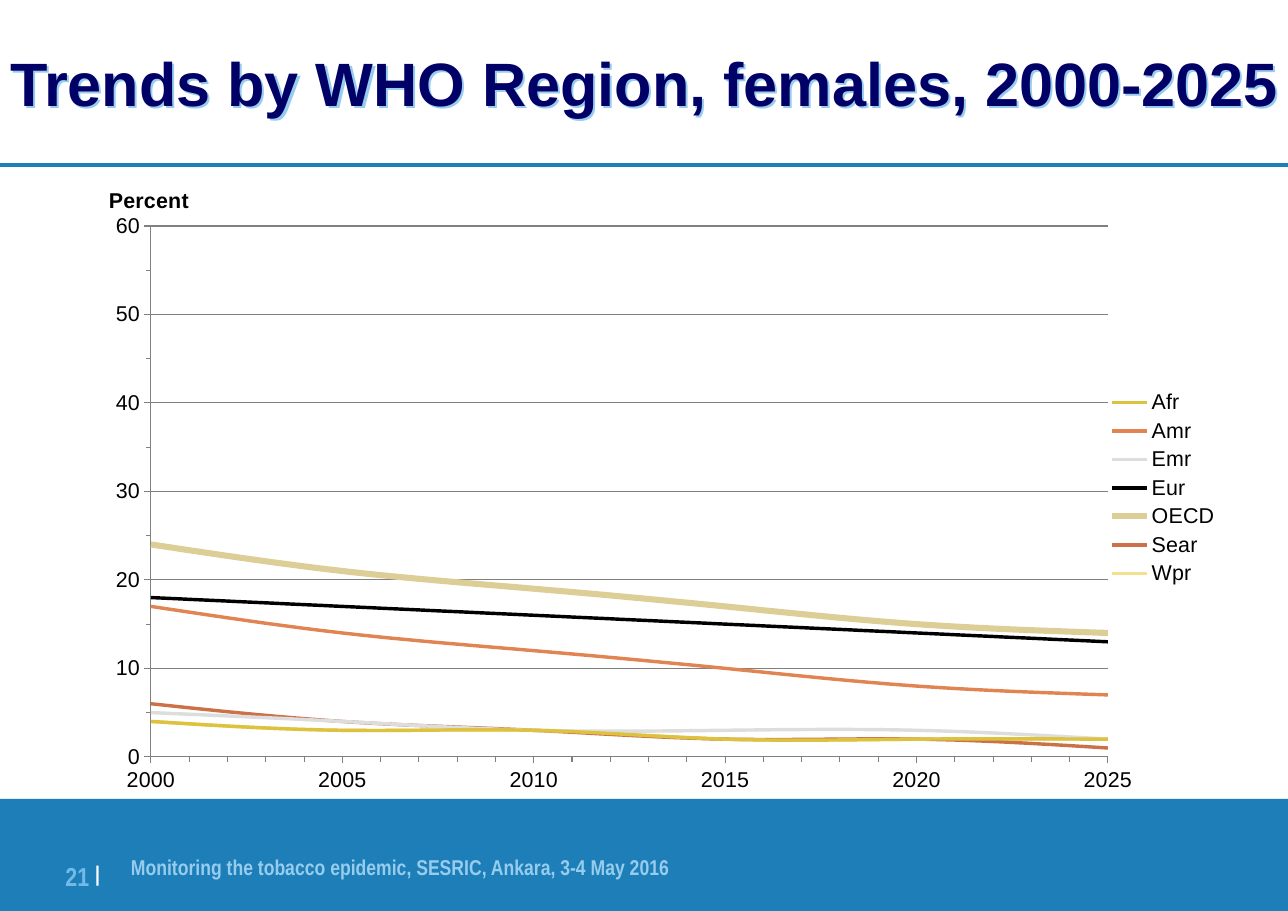
from lxml.etree import SubElement
from pptx import Presentation
from pptx.chart.data import XyChartData
from pptx.dml.color import RGBColor
from pptx.enum.chart import XL_CHART_TYPE, XL_LEGEND_POSITION, XL_TICK_MARK
from pptx.enum.shapes import MSO_CONNECTOR, MSO_SHAPE
from pptx.enum.text import MSO_ANCHOR, PP_ALIGN
from pptx.oxml.ns import qn
from pptx.util import Pt

PX = 8298
CHART_W, CHART_H = 1168, 613
COLORS = {
    "blue": "1E7FB8", "navy": "000066", "shadow": "96CCEE", "footer": "96CCEE",
    "number": "72BBE8", "white": "FFFFFF", "black": "000000", "axis": "808080",
    "Afr": "DDC23F", "Amr": "E08452", "Emr": "DDDDDD", "Eur": "000000",
    "OECD": "DDCE97", "Sear": "CB7047", "Wpr": "F5E08F",
}
YEARS = range(2000, 2026, 5)
RATES = {
    "Afr": (4, 3, 3, 2, 2, 2),
    "Amr": (17, 14, 12, 10, 8, 7),
    "Emr": (5, 4, 3, 3, 3, 2),
    "Eur": (18, 17, 16, 15, 14, 13),
    "OECD": (24, 21, 19, 17, 15, 14),
    "Sear": (6, 4, 3, 2, 2, 1),
    "Wpr": (4, 3, 3, 2, 2, 2),
}


def emu(*lengths):
    return [n * PX for n in lengths]


def rgb(name):
    return RGBColor.from_string(COLORS[name])


def place(element, index, x, y, w=None, h=None, target=None):
    for old in element.findall(qn("c:layout")):
        element.remove(old)
    layout = SubElement(element, qn("c:layout"))
    manual = SubElement(layout, qn("c:manualLayout"))
    values = {"layoutTarget": target, "xMode": "edge", "yMode": "edge",
              "x": x / CHART_W, "y": y / CHART_H,
              "w": w and w / CHART_W, "h": h and h / CHART_H}
    for tag, value in values.items():
        if value is not None:
            SubElement(manual, qn("c:" + tag)).set("val", str(value))
    element.insert(index, layout)


class Deck:
    def __init__(self, width, height):
        self.prs = Presentation()
        self.prs.slide_width, self.prs.slide_height = emu(width, height)
        self.s = self.prs.slides.add_slide(self.prs.slide_layouts[6])

    def rule(self, x1, y1, x2, y2, color, width):
        ln = self.s.shapes.add_connector(MSO_CONNECTOR.STRAIGHT, *emu(x1, y1, x2, y2))
        ln.line.color.rgb = rgb(color)
        ln.line.width = Pt(width)
        SubElement(ln._element.spPr, qn("a:effectLst"))

    def band(self, x, y, w, h, color):
        sp = self.s.shapes.add_shape(MSO_SHAPE.RECTANGLE, *emu(x, y, w, h))
        sp.shadow.inherit = False
        sp.fill.solid()
        sp.fill.fore_color.rgb = rgb(color)
        sp.line.fill.background()

    def text(self, x, y, w, h, runs, font, align=PP_ALIGN.LEFT, anchor=MSO_ANCHOR.TOP):
        sp = self.s.shapes.add_textbox(*emu(x, y, w, h))
        tf = sp.text_frame
        tf.word_wrap = True
        tf.vertical_anchor = anchor
        tf.margin_left = tf.margin_top = tf.margin_right = tf.margin_bottom = 0
        p = tf.paragraphs[0]
        p.alignment = align
        for text, size, color, baseline in runs:
            r = p.add_run()
            r.text = text
            r.font.name = font
            r.font.size = Pt(size)
            r.font.bold = True
            r.font.color.rgb = rgb(color)
            if baseline:
                r.font._element.set("baseline", str(baseline * 1000))
        return sp

    def shadow(self, sp, color):
        effects = SubElement(sp._element.spPr, qn("a:effectLst"))
        outer = SubElement(effects, qn("a:outerShdw"), dist="25400", dir="2700000", algn="ctr")
        SubElement(outer, qn("a:srgbClr"), val=COLORS[color])

    def axis(self, axis, low, high, major, minor):
        axis.minimum_scale, axis.maximum_scale = low, high
        axis.major_unit, axis.minor_unit = major, minor
        axis.major_tick_mark = axis.minor_tick_mark = XL_TICK_MARK.OUTSIDE
        axis.tick_labels.number_format = "0"
        axis.tick_labels.number_format_is_linked = False
        axis.format.line.color.rgb = rgb("axis")
        axis.format.line.width = Pt(0.75)

    def chart(self, x, y):
        data = XyChartData()
        for name, rates in RATES.items():
            series = data.add_series(name)
            for year, rate in zip(YEARS, rates):
                series.add_data_point(year, rate)
        chart = self.s.shapes.add_chart(
            XL_CHART_TYPE.XY_SCATTER_SMOOTH_NO_MARKERS,
            *emu(x, y, CHART_W, CHART_H), data).chart
        chart.has_title = False
        chart.font.name = "Arial"
        chart.font.size = Pt(14)
        chart.font.color.rgb = rgb("black")
        plot = chart.plots[0]
        plot.vary_by_categories = False
        for series in plot.series:
            series._element.get_or_add_smooth().val = True
            line = series.format.line
            line.color.rgb = rgb(series.name)
            line.width = Pt(4 if series.name == "OECD" else 2.25)

        self.axis(chart.category_axis, 2000, 2025, 5, 1)
        chart.category_axis.has_major_gridlines = False
        value = chart.value_axis
        self.axis(value, 0, 60, 10, 5)
        value.has_major_gridlines = True
        value.major_gridlines.format.line.color.rgb = rgb("axis")
        value.major_gridlines.format.line.width = Pt(0.75)

        tf = value.axis_title.text_frame
        r = tf.paragraphs[0].add_run()
        r.text = "Percent"
        r.font.name = "Arial"
        r.font.size = Pt(14)
        r.font.bold = True
        r.font.color.rgb = rgb("black")
        body = tf._txBody.find(qn("a:bodyPr"))
        body.set("rot", "0")
        body.set("vert", "horz")
        place(value.axis_title._element, 1, 42, 0)

        chart.has_legend = True
        legend = chart.legend
        legend.position = XL_LEGEND_POSITION.RIGHT
        legend.include_in_layout = False
        place(legend._element, 1, 1042, 203, 117, 204)
        area = chart._chartSpace.find(".//" + qn("c:plotArea"))
        place(area, 0, 88, 43, 957, 531, "inner")


def main():
    deck = Deck(1288, 911)
    deck.rule(0, 165, 1288, 165, "blue", 3)
    deck.band(0, 799, 1288, 112, "blue")
    deck.text(131, 854, 598, 57,
              [("Monitoring the tobacco epidemic, SESRIC, Ankara, 3-4 May 2016", 14, "footer", 0)],
              "Arial Narrow")
    deck.text(51, 850, 49, 44, [("21 ", 17, "number", 0), ("|", 24, "white", 14)],
              "Arial Narrow", PP_ALIGN.RIGHT)
    title = deck.text(0, 0, 1288, 164,
                      [("Trends by WHO Region, females, 2000-2025", 40, "navy", 0)],
                      "Arial", PP_ALIGN.CENTER, MSO_ANCHOR.MIDDLE)
    deck.shadow(title, "shadow")
    deck.chart(63, 183)
    deck.prs.save("out.pptx")


if __name__ == "__main__":
    main()
